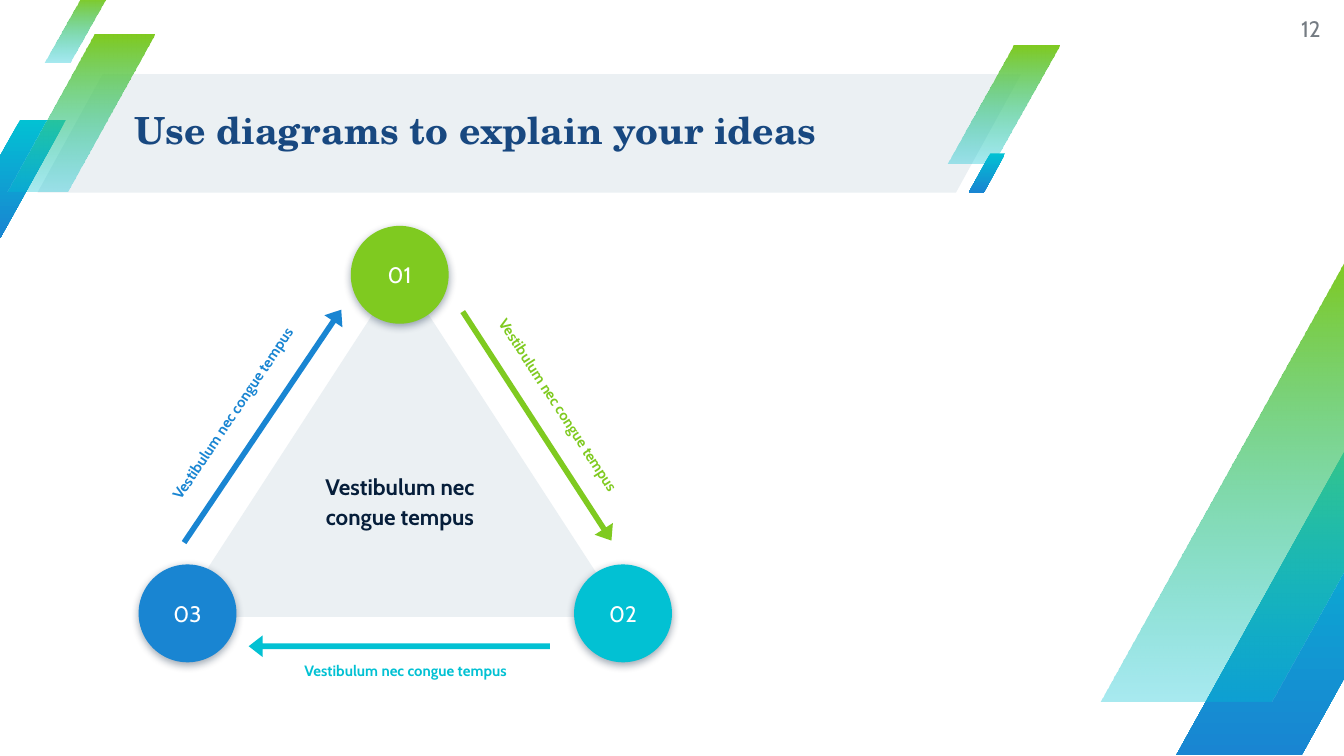
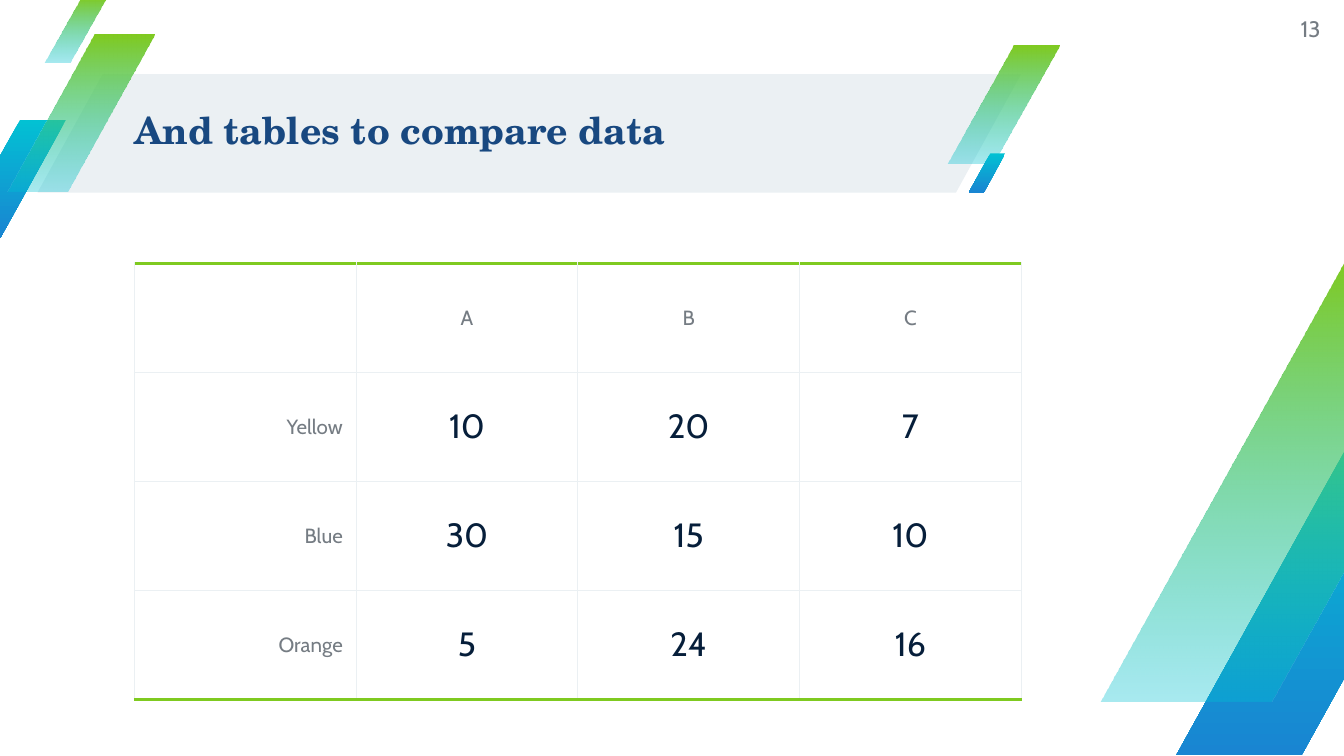
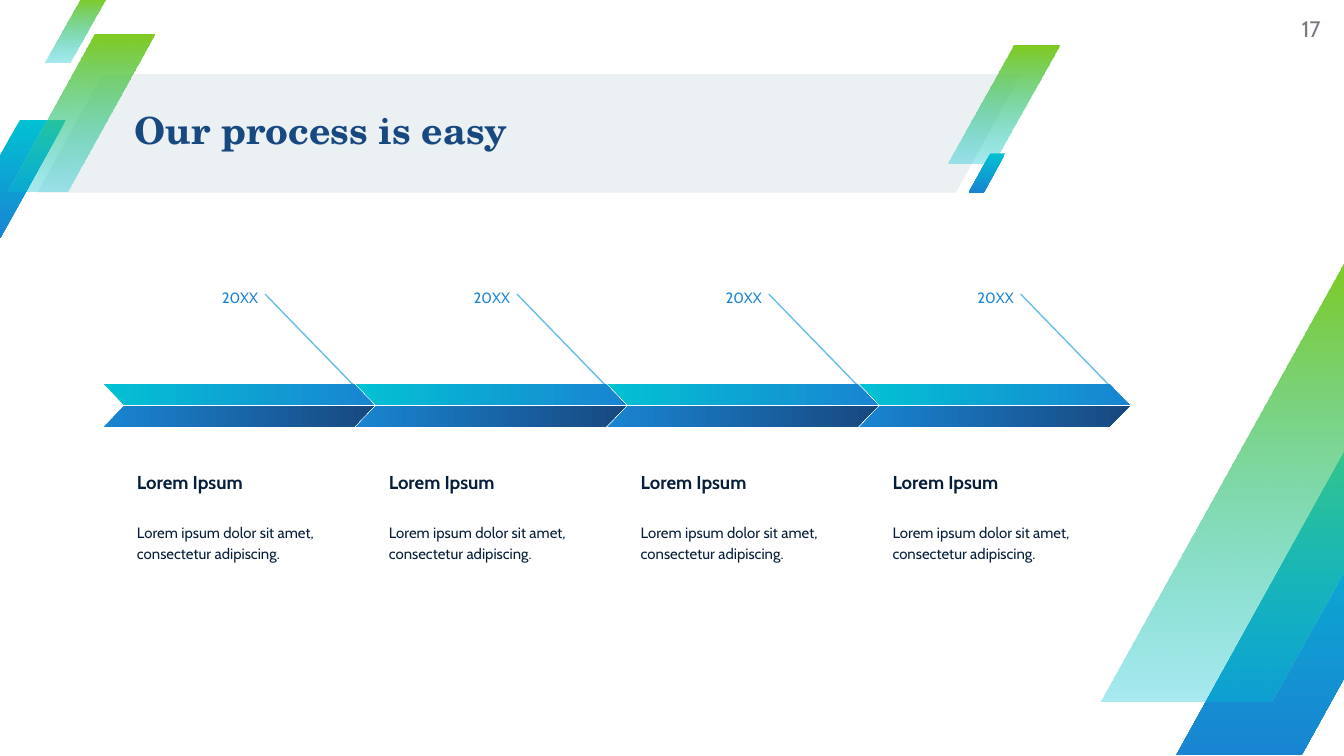
import pptx
import pptx.dml.color
import pptx.enum.shapes
import pptx.enum.text
import pptx.oxml.ns
import pptx.util
from lxml import etree

Cm = pptx.util.Cm
Pt = pptx.util.Pt
qn = pptx.oxml.ns.qn
SHAPE = pptx.enum.shapes.MSO_SHAPE
ALIGN = pptx.enum.text.PP_ALIGN
ANCHOR = pptx.enum.text.MSO_ANCHOR

COLORS = {
    "green": "7FCA20", "teal": "02C1D3", "blue": "1985D2", "navy": "184880",
    "ink": "061E3A", "gray": "757C83", "pale": "EBF0F3", "sky": "66BDE8",
    "white": "FFFFFF",
}
BODY_FONT = "Cabin"
TITLE_FONT = "TeX Gyre Schola"

# Gradients: start colour, end colour, opacity of the end in percent
FRESH = ("green", "teal", 34)
OCEAN = ("teal", "blue", 100)
DEEP = ("blue", "navy", 100)

# Slanted stripes on every slide: left, top, width, height, gradient
STRIPES = [
    (-0.86, 2.26, 2.11, 2.24, OCEAN),
    (17.91, 0.86, 2.11, 2.24, FRESH),
    (0.15, 0.66, 2.77, 2.97, FRESH),
    (0.84, -0.05, 1.17, 1.24, FRESH),
    (18.31, 2.9, 0.69, 0.74, OCEAN),
    (22.23, 8.13, 5.77, 6.15, OCEAN),
    (20.8, 4.88, 7.87, 8.38, FRESH),
]


def rgb(name):
    return pptx.dml.color.RGBColor.from_string(COLORS[name])


def put_text(tf, text, size=8, color="ink", font=BODY_FONT, bold=False,
             align=ALIGN.LEFT, spacing=None, after=None):
    """Write one formatted paragraph into a text frame."""
    p = tf.paragraphs[0]
    p.alignment = align
    if spacing:
        p.line_spacing = spacing
    if after:
        p.space_after = Pt(after)
    r = p.add_run()
    r.text = text
    r.font.size, r.font.name, r.font.bold = Pt(size), font, bold
    r.font.color.rgb = rgb(color)


class Deck:
    """Holds the shared style and the current slide."""

    def __init__(self):
        self.prs = pptx.Presentation()
        self.prs.slide_width, self.prs.slide_height = Cm(25.4), Cm(14.29)
        self.s = None

    def new_slide(self, title, number):
        self.s = self.prs.slides.add_slide(self.prs.slide_layouts[6])
        self.shape(SHAPE.PARALLELOGRAM, 0.71, 1.4, 18.59, 2.24, "pale", adj=[0.55])
        for x, y, w, h, colors in STRIPES:
            self.gradient_band(x, y, w, h, colors, slant=0.59, angle=270)
        self.text(title, 2.54, 1.37, 16.74, 2.26, inset=0, anchor=ANCHOR.MIDDLE,
                  size=20, color="navy", font=TITLE_FONT, bold=True, spacing=0.9)
        self.text(number, 23.77, 0, 1.19, 1.09, inset=0, anchor=ANCHOR.MIDDLE,
                  size=12, color="gray", align=ALIGN.RIGHT)

    def shape(self, kind, x, y, w, h, fill=None, adj=(), rot=0):
        sp = self.s.shapes.add_shape(kind, Cm(x), Cm(y), Cm(w), Cm(h))
        sp.shadow.inherit = False
        sp.line.fill.background()
        sp.rotation = rot
        for i, value in enumerate(adj):
            sp.adjustments[i] = value
        if fill:
            sp.fill.solid()
            sp.fill.fore_color.rgb = rgb(fill)
        return sp

    def gradient_band(self, x, y, w, h, colors, slant, angle=0, flip=False):
        sp = self.shape(SHAPE.PARALLELOGRAM, x, y, w, h, adj=[slant])
        start, end, opacity = colors
        sp.fill.gradient()
        sp.fill.gradient_angle = angle
        for stop, name in zip(sp.fill.gradient_stops, (start, end)):
            stop.color.rgb = rgb(name)
        if opacity < 100:
            clr = list(sp._element.spPr.iter(qn("a:srgbClr")))[-1]
            etree.SubElement(clr, qn("a:alpha"), val=str(opacity * 1000))
        if flip:
            sp._element.spPr.find(qn("a:xfrm")).set("flipV", "1")

    def text(self, text, x, y, w, h, inset=0.25, anchor=ANCHOR.TOP, rot=0, **fmt):
        sp = self.s.shapes.add_textbox(Cm(x), Cm(y), Cm(w), Cm(h))
        sp.rotation = rot
        self.fill_frame(sp.text_frame, text, inset, anchor, **fmt)

    def fill_frame(self, tf, text, inset, anchor, **fmt):
        tf.word_wrap = True
        tf.vertical_anchor = anchor
        tf.margin_left = tf.margin_right = Cm(inset)
        tf.margin_top = tf.margin_bottom = Cm(inset)
        put_text(tf, text, **fmt)

    def circle(self, text, x, y, color):
        sp = self.shape(SHAPE.OVAL, x, y, 1.85, 1.85, color)
        effects = sp._element.spPr.find(qn("a:effectLst"))
        shadow = etree.SubElement(effects, qn("a:outerShdw"), blurRad=str(Pt(4.5)),
                                  dist=str(Pt(1.5)), dir="5400000", rotWithShape="0")
        clr = etree.SubElement(shadow, qn("a:srgbClr"), val=COLORS["ink"])
        etree.SubElement(clr, qn("a:alpha"), val="38000")
        self.fill_frame(sp.text_frame, text, 0.25, ANCHOR.MIDDLE,
                        size=12, color="white", align=ALIGN.CENTER)

    def line(self, x1, y1, x2, y2, color, width=0.75):
        cn = self.s.shapes.add_connector(pptx.enum.shapes.MSO_CONNECTOR.STRAIGHT,
                                         Cm(x1), Cm(y1), Cm(x2), Cm(y2))
        cn.line.color.rgb = rgb(color)
        cn.line.width = Pt(width)
        etree.SubElement(cn._element.spPr, qn("a:effectLst"))

    def table(self, rows, x, y, col_w, row_h):
        n_rows, n_cols = len(rows), len(rows[0])
        tbl = self.s.shapes.add_table(n_rows, n_cols, Cm(x), Cm(y), Cm(col_w * n_cols),
                                      Cm(row_h * n_rows)).table
        tbl.first_row = tbl.horz_banding = False
        for col in tbl.columns:
            col.width = Cm(col_w)
        for i, row in enumerate(rows):
            tbl.rows[i].height = Cm(row_h)
            for j, value in enumerate(row):
                cell = tbl.cell(i, j)
                self.borders(cell, top=i == 0, bottom=i == n_rows - 1)
                cell.fill.background()
                cell.vertical_anchor = ANCHOR.MIDDLE
                cell.margin_left = cell.margin_right = Cm(0.25)
                cell.margin_top = cell.margin_bottom = Cm(0.18)
                is_label = i == 0 or j == 0
                if value:
                    put_text(cell.text_frame, value, size=11 if is_label else 18,
                             color="gray" if is_label else "ink",
                             align=ALIGN.CENTER if j else ALIGN.RIGHT)

    def borders(self, cell, top, bottom):
        """Pale hairlines, with green rules above and below the table."""
        tc_pr = cell._tc.get_or_add_tcPr()
        for side, accent in (("L", False), ("R", False), ("T", top), ("B", bottom)):
            ln = etree.SubElement(tc_pr, qn("a:ln" + side),
                                  w=str(Pt(1.5 if accent else 0.75)))
            fill = etree.SubElement(ln, qn("a:solidFill"))
            etree.SubElement(fill, qn("a:srgbClr"),
                             val=COLORS["green" if accent else "pale"])


def diagram_slide(deck):
    deck.new_slide("Use diagrams to explain your ideas", "12")
    phrase = "Vestibulum nec congue tempus"
    centered = {"bold": True, "align": ALIGN.CENTER, "spacing": 1.15}
    deck.shape(SHAPE.ISOSCELES_TRIANGLE, 3.33, 5.13, 8.48, 6.53, "pale")
    deck.text(phrase, 5.21, 8.61, 4.7, 2.62, size=12, **centered)

    # number, colour, circle, arrow (left, top, length, turn), label (left, top, turn)
    stages = [
        ("02", "teal", (10.85, 10.67), (4.7, 12.01, 5.69, 180), (4.95, 12.27, 0)),
        ("03", "blue", (2.62, 10.67), (2.31, 7.85, 5.31, 304), (1.73, 7.37, 303.9)),
        ("01", "green", (6.63, 4.27), (7.57, 7.85, 5.16, 57), (7.77, 7.21, 57)),
    ]
    for number, color, circle, (ax, ay, length, turn), (lx, ly, tilt) in stages:
        deck.shape(SHAPE.RIGHT_ARROW, ax, ay, length, 0.41, color,
                   adj=[0.255, 0.643], rot=turn)
        deck.text(phrase, lx, ly, 5.44, 0.97, rot=tilt, color=color, **centered)
        deck.circle(number, *circle, color)


def table_slide(deck):
    deck.new_slide("And tables to compare data", "13")
    rows = [
        ("", "A", "B", "C"),
        ("Yellow", "10", "20", "7"),
        ("Blue", "30", "15", "10"),
        ("Orange", "5", "24", "16"),
    ]
    deck.table(rows, 2.54, 4.98, col_w=4.19, row_h=2.06)


def process_slide(deck):
    deck.new_slide("Our process is easy", "17")
    for i in range(4):
        x = 1.96 + 4.76 * i
        # Date, heading and description
        deck.text("20XX", x + 1.44, 5.21, 1.73, 0.66, color="blue",
                  align=ALIGN.RIGHT, spacing=1.15, after=16)
        deck.text("Lorem Ipsum", x + 0.38, 8.33, 4.19, 1.24, anchor=ANCHOR.BOTTOM,
                  size=10, bold=True, spacing=1.15)
        deck.text("Lorem ipsum dolor sit amet, consectetur adipiscing.",
                  x + 0.38, 9.6, 4.29, 2.06, spacing=1.15, after=16)
        # Pointer and two-part chevron
        deck.line(x + 3.05, 5.56, x + 5.05, 7.62, "sky")
        deck.gradient_band(x, 7.26, 5.11, 0.4, OCEAN, slant=0.97, flip=True)
        deck.gradient_band(x, 7.67, 5.11, 0.4, DEEP, slant=0.97)


def main():
    deck = Deck()
    diagram_slide(deck)
    table_slide(deck)
    process_slide(deck)
    deck.prs.save("out.pptx")


if __name__ == "__main__":
    main()
